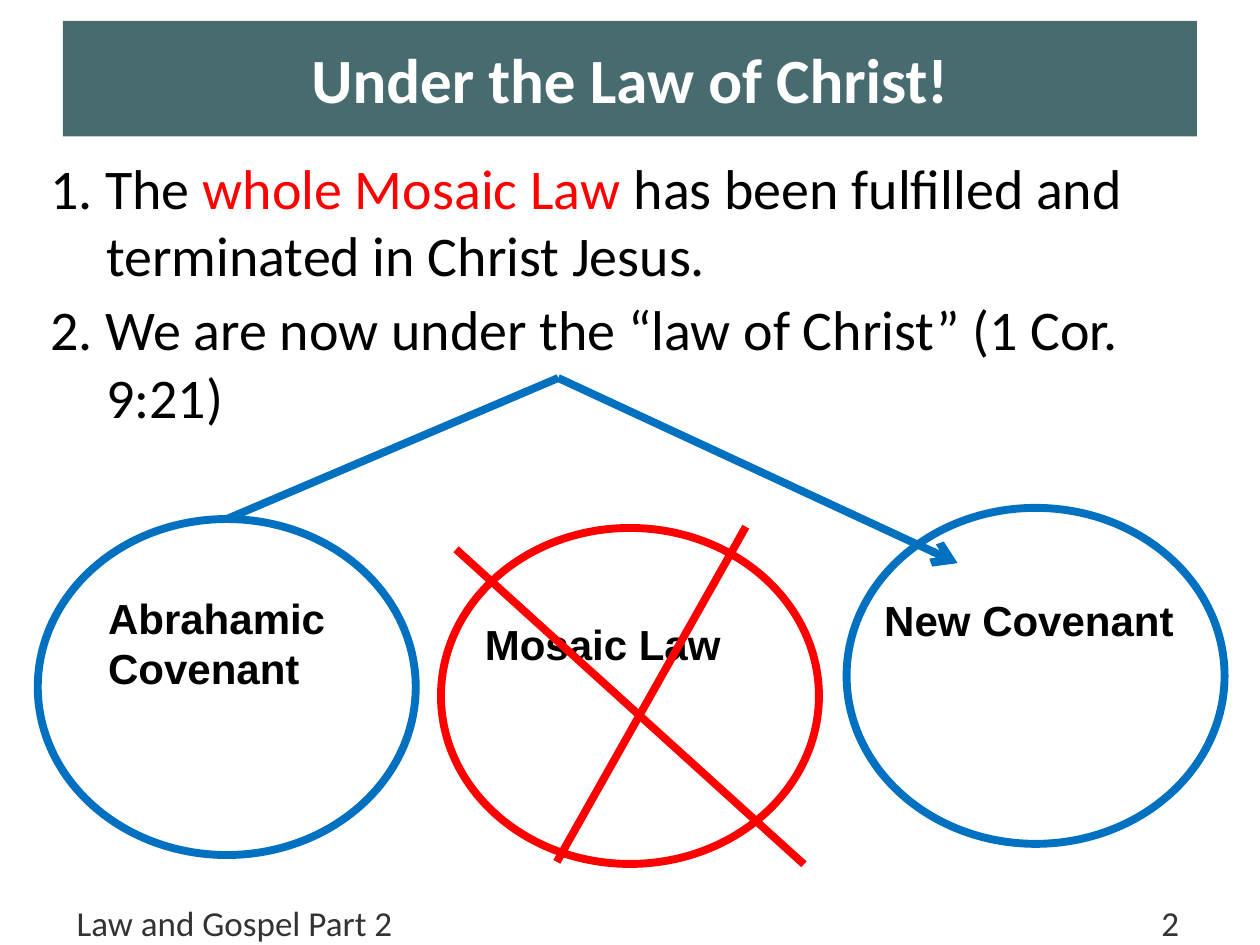
import pptx
import pptx.util
import pptx.dml.color
import pptx.enum.shapes
import pptx.enum.text
import pptx.oxml.ns
from lxml import etree

Pt = pptx.util.Pt
BLUE, RED, BLACK, WHITE = "0070C0", "FF0000", "000000", "FFFFFF"
LINE_WIDTH = 4.5
CIRCLE_SIZE = (216, 192)


def color(value):
    return pptx.dml.color.RGBColor.from_string(value)


def add_xml(parent, tag, **attributes):
    return etree.SubElement(parent, pptx.oxml.ns.qn(tag), **attributes)


def format_font(font, name, size, value, bold=False):
    font.name = name
    font.size = Pt(size)
    font.bold = bold
    font.color.rgb = color(value)


def add_text_box(s, left, top, width, height):
    """Add an empty wrapping text box and return its text frame."""
    tf = s.shapes.add_textbox(Pt(left), Pt(top), Pt(width), Pt(height)).text_frame
    tf.word_wrap = True
    return tf


def add_title(s, text):
    sp = s.shapes.add_shape(pptx.enum.shapes.MSO_SHAPE.RECTANGLE,
                            Pt(36), Pt(12), Pt(648), Pt(66))
    sp.shadow.inherit = False
    sp.fill.solid()
    sp.fill.fore_color.rgb = color("486B70")
    sp.line.fill.background()
    tf = sp.text_frame
    tf.text = text
    tf.vertical_anchor = pptx.enum.text.MSO_ANCHOR.MIDDLE
    p = tf.paragraphs[0]
    p.alignment = pptx.enum.text.PP_ALIGN.CENTER
    format_font(p.runs[0].font, "Calibri", 36, WHITE, bold=True)


def add_points(s, points):
    """Add hanging paragraphs, each a list of (text, color) runs."""
    tf = add_text_box(s, 21.6, 84.2, 662.4, 390)
    for i, runs in enumerate(points):
        p = tf.add_paragraph() if i else tf.paragraphs[0]
        if i:
            p.space_before = Pt(4)
        pPr = p._p.get_or_add_pPr()
        pPr.set("marL", str(Pt(32)))
        pPr.set("indent", str(Pt(-32)))
        for text, value in runs:
            r = p.add_run()
            r.text = text
            format_font(r.font, "Calibri", 32, value)


def add_footer(s, text, number):
    tf = add_text_box(s, 36.7, 506.2, 648, 42)
    tf.vertical_anchor = pptx.enum.text.MSO_ANCHOR.MIDDLE
    p = tf.paragraphs[0]
    p.text = f"{text}\t{number}"
    tabs = add_xml(p._p.get_or_add_pPr(), "a:tabLst")
    add_xml(tabs, "a:tab", pos=str(Pt(630)), algn="r")
    format_font(p.runs[0].font, "Calibri", 20, "333333")


def add_circle(s, left, top, value):
    sp = s.shapes.add_shape(pptx.enum.shapes.MSO_SHAPE.OVAL,
                            Pt(left), Pt(top), *map(Pt, CIRCLE_SIZE))
    sp.shadow.inherit = False
    sp.fill.background()
    sp.line.color.rgb = color(value)
    sp.line.width = Pt(LINE_WIDTH)


def add_label(s, text, left, top, width, height):
    tf = add_text_box(s, left, top, width, height)
    tf.text = text
    format_font(tf.paragraphs[0].runs[0].font, "Arial", 24, BLACK, bold=True)


def add_line(s, start, end, value, arrow=False):
    sp = s.shapes.add_connector(pptx.enum.shapes.MSO_CONNECTOR.STRAIGHT,
                                *map(Pt, start + end))
    sp.line.color.rgb = color(value)
    sp.line.width = Pt(LINE_WIDTH)
    if arrow:
        add_xml(sp.line._get_or_add_ln(), "a:tailEnd", type="arrow")
    add_xml(sp._element.spPr, "a:effectLst")


def main():
    prs = pptx.Presentation()
    prs.slide_width, prs.slide_height = Pt(720), Pt(540)
    s = prs.slides.add_slide(prs.slide_layouts[6])

    add_footer(s, "Law and Gospel Part 2", 2)
    add_points(s, [
        [("1. The ", BLACK), ("whole Mosaic Law ", RED),
         ("has been fulfilled and terminated in Christ Jesus.", BLACK)],
        [("2. We are now under the “law of Christ” (1 Cor. 9:21)", BLACK)],
    ])
    add_title(s, "Under the Law of Christ!")

    for left, top, value in [(252, 301.7, RED), (483.8, 290.2, BLUE),
                             (21.6, 296.6, BLUE)]:
        add_circle(s, left, top, value)
    for text, left, top, width, height in [
            ("Mosaic Law", 270, 350, 150, 36),
            ("Abrahamic Covenant", 54.7, 334.8, 150, 65.5),
            ("New Covenant", 498.2, 336.2, 201, 36)]:
        add_label(s, text, left, top, width, height)

    add_line(s, (260.6, 313.9), (459.4, 493.9), RED)
    add_line(s, (426.2, 301), (318.2, 492.5), RED)
    peak = (319, 216)
    add_line(s, (129.6, 296.6), peak, BLUE)
    add_line(s, peak, (547.2, 321.8), BLUE, arrow=True)

    prs.save("out.pptx")


if __name__ == "__main__":
    main()
